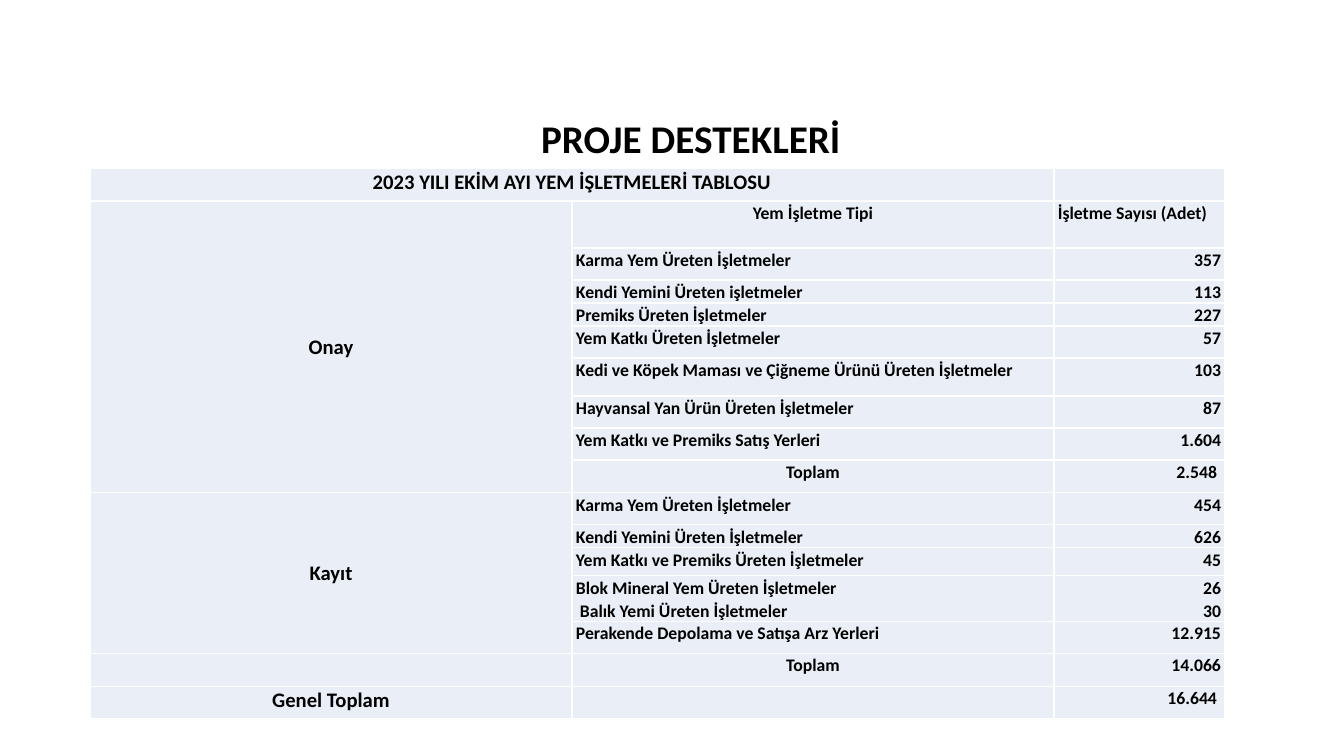
"""Build the slide with the table of feed businesses."""
from dataclasses import dataclass

from lxml.etree import SubElement
from pptx import Presentation
from pptx.dml.color import RGBColor
from pptx.enum.text import MSO_ANCHOR, MSO_AUTO_SIZE, PP_ALIGN
from pptx.oxml.ns import qn
from pptx.util import Pt

SLIDE_SIZE = (1344, 756)
TITLE = "PROJE DESTEKLERİ"
TITLE_BOX = (510, 109, 362, 55)
TABLE_ORIGIN = (90, 168)
COLUMN_WIDTHS = (482, 482, 171)
ROWS = [
    (33, "2023 YILI EKİM AYI YEM İŞLETMELERİ TABLOSU", "", ""),
    (47, "Onay", "Yem İşletme Tipi", "İşletme Sayısı (Adet)"),
    (32, "", "Karma Yem Üreten İşletmeler", "357"),
    (23, "", "Kendi Yemini Üreten işletmeler", "113"),
    (23, "", "Premiks Üreten İşletmeler", "227"),
    (32, "", "Yem Katkı Üreten İşletmeler", "57"),
    (38, "", "Kedi ve Köpek Maması ve Çiğneme Ürünü Üreten İşletmeler", "103"),
    (32, "", "Hayvansal Yan Ürün Üreten İşletmeler", "87"),
    (32, "", "Yem Katkı ve Premiks Satış Yerleri", "1.604"),
    (33, "", "Toplam", "2.548 "),
    (32, "Kayıt", "Karma Yem Üreten İşletmeler", "454"),
    (23, "", "Kendi Yemini Üreten İşletmeler", "626"),
    (28, "", "Yem Katkı ve Premiks Üreten İşletmeler", "45"),
    (45, "", "Blok Mineral Yem Üreten İşletmeler\n Balık Yemi Üreten İşletmeler", "26\n30"),
    (32, "", "Perakende Depolama ve Satışa Arz Yerleri", "12.915"),
    (33, "", "Toplam", "14.066"),
    (32, "Genel Toplam", "", "16.644 "),
]
MERGES = [((0, 0), (0, 1)), ((1, 0), (9, 0)), ((10, 0), (14, 0))]
CENTRED_TYPES = {"Yem İşletme Tipi", "Toplam"}
COUNT_HEADING = "İşletme Sayısı (Adet)"


@dataclass(frozen=True)
class Theme:
    """Colours and type sizes of the slide."""
    font: str = "Calibri"
    text: str = "000000"
    cell: str = "EAEFF7"
    border: str = "FFFFFF"
    title_size: float = 26.6
    group_size: float = 14
    body_size: float = 12
    line_spacing: float = 1.07


THEME = Theme()
EMU_PER_PX = 8618


def px(length):
    """Turn a length in px into EMU."""
    return length * EMU_PER_PX


def write_text(frame, text, *, size, align, spacing=None):
    """Write one bold paragraph per line of text."""
    for index, line in enumerate(text.split("\n")):
        paragraph = frame.add_paragraph() if index else frame.paragraphs[0]
        paragraph.alignment = align
        paragraph.line_spacing = spacing
        run = paragraph.add_run()
        run.text = line
        run.font.name = THEME.font
        run.font.size = Pt(size)
        run.font.bold = True
        run.font.color.rgb = RGBColor.from_string(THEME.text)


def style_cell(cell):
    """Set the margins, borders and fill of a cell."""
    cell.margin_left = cell.margin_right = px(4)
    cell.margin_top = cell.margin_bottom = 0
    properties = cell._tc.get_or_add_tcPr()
    for side in ("lnL", "lnR", "lnT", "lnB"):
        line = SubElement(properties, qn(f"a:{side}"), w=str(Pt(1)))
        fill = SubElement(line, qn("a:solidFill"))
        SubElement(fill, qn("a:srgbClr"), val=THEME.border)
    cell.fill.solid()
    cell.fill.fore_color.rgb = RGBColor.from_string(THEME.cell)


def cell_alignment(column, text):
    """Choose the alignment from the column and the kind of text."""
    if column == 0 or text in CENTRED_TYPES:
        return PP_ALIGN.CENTER
    if column == 1 or text == COUNT_HEADING:
        return PP_ALIGN.LEFT
    return PP_ALIGN.RIGHT


def add_title(slide):
    """Add the title above the table."""
    frame = slide.shapes.add_textbox(*map(px, TITLE_BOX)).text_frame
    frame.word_wrap = False
    frame.auto_size = MSO_AUTO_SIZE.SHAPE_TO_FIT_TEXT
    write_text(frame, TITLE, size=THEME.title_size, align=PP_ALIGN.CENTER)


def add_business_table(slide):
    """Add the table of business types and counts."""
    extent = (sum(COLUMN_WIDTHS), sum(row[0] for row in ROWS))
    table = slide.shapes.add_table(
        len(ROWS), len(COLUMN_WIDTHS), *map(px, TABLE_ORIGIN + extent)).table
    table.first_row = table.horz_banding = False
    for column, width in zip(table.columns, COLUMN_WIDTHS):
        column.width = px(width)
    for row_index, (height, *texts) in enumerate(ROWS):
        table.rows[row_index].height = px(height)
        for column_index, text in enumerate(texts):
            cell = table.cell(row_index, column_index)
            style_cell(cell)
            if text:
                size = THEME.body_size if column_index else THEME.group_size
                write_text(cell.text_frame, text, size=size, spacing=THEME.line_spacing,
                           align=cell_alignment(column_index, text))
    for first, last in MERGES:
        table.cell(*first).merge(table.cell(*last))
        if last[0] > first[0]:
            table.cell(*first).vertical_anchor = MSO_ANCHOR.MIDDLE


def main():
    """Create and save the presentation."""
    presentation = Presentation()
    presentation.slide_width, presentation.slide_height = map(px, SLIDE_SIZE)
    slide = presentation.slides.add_slide(presentation.slide_layouts[6])
    add_title(slide)
    add_business_table(slide)
    presentation.save("out.pptx")


if __name__ == "__main__":
    main()
